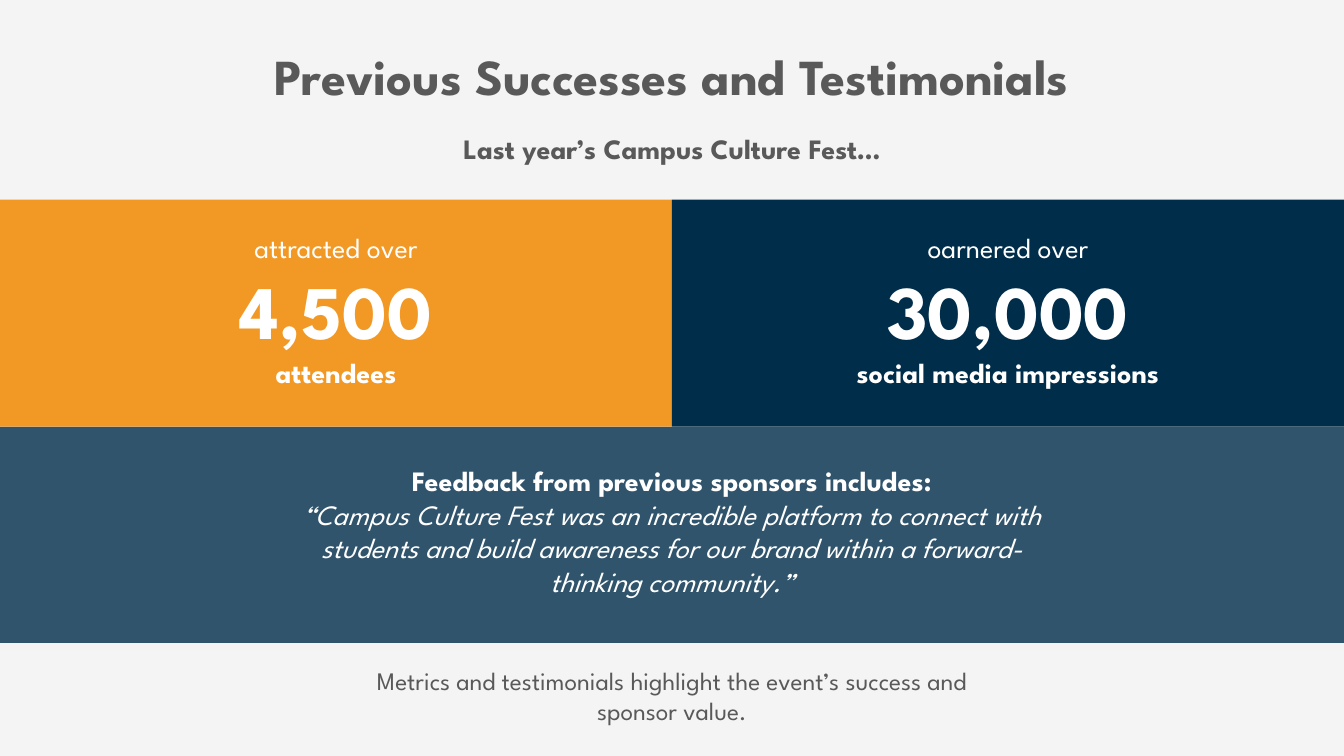
from dataclasses import dataclass

from lxml import etree
from pptx import Presentation
from pptx.dml.color import RGBColor
from pptx.enum.shapes import MSO_SHAPE
from pptx.enum.text import MSO_AUTO_SIZE, PP_ALIGN
from pptx.oxml.ns import qn
from pptx.slide import Slide
from pptx.util import Cm, Pt

RECTANGLE = MSO_SHAPE.RECTANGLE
GROW = MSO_AUTO_SIZE.SHAPE_TO_FIT_TEXT
CENTER = PP_ALIGN.CENTER

LIGHT_GRAY = RGBColor(0xF4, 0xF4, 0xF4)
DARK_GRAY = RGBColor(0x59, 0x59, 0x59)
WHITE = RGBColor(0xFF, 0xFF, 0xFF)
ORANGE = RGBColor(0xF2, 0x98, 0x24)
NAVY = RGBColor(0x00, 0x2D, 0x4A)

FONT = "League Spartan"
SLIDE_WIDTH = 33.87
SLIDE_HEIGHT = 19.05
HALF_WIDTH = SLIDE_WIDTH / 2
STATISTIC_TOP = 5.03
STATISTIC_HEIGHT = 5.72
FEEDBACK_TOP = 10.76
FEEDBACK_HEIGHT = 5.44


@dataclass(frozen=True)
class Box:
    """A place on the slide, in centimetres."""
    left: float
    top: float
    width: float
    height: float

    def lengths(self) -> tuple[Cm, Cm, Cm, Cm]:
        return Cm(self.left), Cm(self.top), Cm(self.width), Cm(self.height)


@dataclass(frozen=True)
class TextRun:
    text: str
    size: int = 20
    bold: bool = False
    italic: bool = False
    breaks_after: bool = False


@dataclass(frozen=True)
class Statistic:
    lead: str
    number: str
    label: str
    color: RGBColor


STATISTICS = [
    Statistic("attracted over", "4,500", "attendees", ORANGE),
    Statistic("oarnered over", "30,000", "social media impressions", NAVY),
]


def centered_box(top: float, width: float, height: float) -> Box:
    return Box((SLIDE_WIDTH - width) / 2, top, width, height)


def add_panel(slide: Slide, box: Box, color: RGBColor, opacity: int = 100) -> None:
    """Add a plain filled rectangle; opacity is a percentage."""
    shape = slide.shapes.add_shape(RECTANGLE, *box.lengths())
    shape.shadow.inherit = False
    shape.line.fill.background()
    shape.fill.solid()
    shape.fill.fore_color.rgb = color
    if opacity < 100:
        color_element = next(shape.fill._xPr.iter(qn("a:srgbClr")))
        etree.SubElement(color_element, qn("a:alpha"), val=str(opacity * 1000))


def add_text(slide: Slide, box: Box, color: RGBColor, *paragraphs: list[TextRun]) -> None:
    frame = slide.shapes.add_textbox(*box.lengths()).text_frame
    frame.word_wrap = True
    frame.auto_size = GROW
    for index, text_runs in enumerate(paragraphs):
        paragraph = frame.add_paragraph() if index else frame.paragraphs[0]
        paragraph.alignment = CENTER
        for text_run in text_runs:
            run = paragraph.add_run()
            run.text = text_run.text
            run.font.name = FONT
            run.font.size = Pt(text_run.size)
            run.font.bold = text_run.bold
            run.font.italic = text_run.italic
            run.font.color.rgb = color
            if text_run.breaks_after:
                paragraph.add_line_break()


def add_statistic(slide: Slide, statistic: Statistic, left: float) -> None:
    add_panel(slide, Box(left, STATISTIC_TOP, HALF_WIDTH, STATISTIC_HEIGHT), statistic.color)
    add_text(
        slide, Box(left, 5.69, HALF_WIDTH, 4.27), WHITE,
        [TextRun(statistic.lead)],
        [TextRun(statistic.number, size=54, bold=True, breaks_after=True),
         TextRun(statistic.label, bold=True)],
    )


def main() -> None:
    presentation = Presentation()
    presentation.slide_width = Cm(SLIDE_WIDTH)
    presentation.slide_height = Cm(SLIDE_HEIGHT)
    slide = presentation.slides.add_slide(presentation.slide_layouts[6])
    slide.background.fill.solid()
    slide.background.fill.fore_color.rgb = LIGHT_GRAY

    add_text(slide, centered_box(1.02, 25.17, 1.8), DARK_GRAY,
             [TextRun("Previous Successes and Testimonials", size=36, bold=True)])
    add_text(slide, centered_box(3.2, HALF_WIDTH, 1.12), DARK_GRAY,
             [TextRun("Last year’s Campus Culture Fest…", bold=True)])

    for column, statistic in enumerate(STATISTICS):
        add_statistic(slide, statistic, column * HALF_WIDTH)

    add_panel(slide, Box(0, FEEDBACK_TOP, SLIDE_WIDTH, FEEDBACK_HEIGHT), NAVY, opacity=80)
    add_text(
        slide, centered_box(11.56, 19.51, 3.68), WHITE,
        [TextRun("Feedback from previous sponsors includes:", bold=True)],
        [TextRun("“Campus Culture Fest was an incredible platform to connect with "
                 "students and build awareness for our brand within a "
                 "forward-thinking community.”", italic=True)],
    )
    add_text(slide, centered_box(16.64, HALF_WIDTH, 1.8), DARK_GRAY,
             [TextRun("Metrics and testimonials highlight the event’s success and "
                      "sponsor value.", size=18)])

    presentation.save("out.pptx")


if __name__ == "__main__":
    main()
